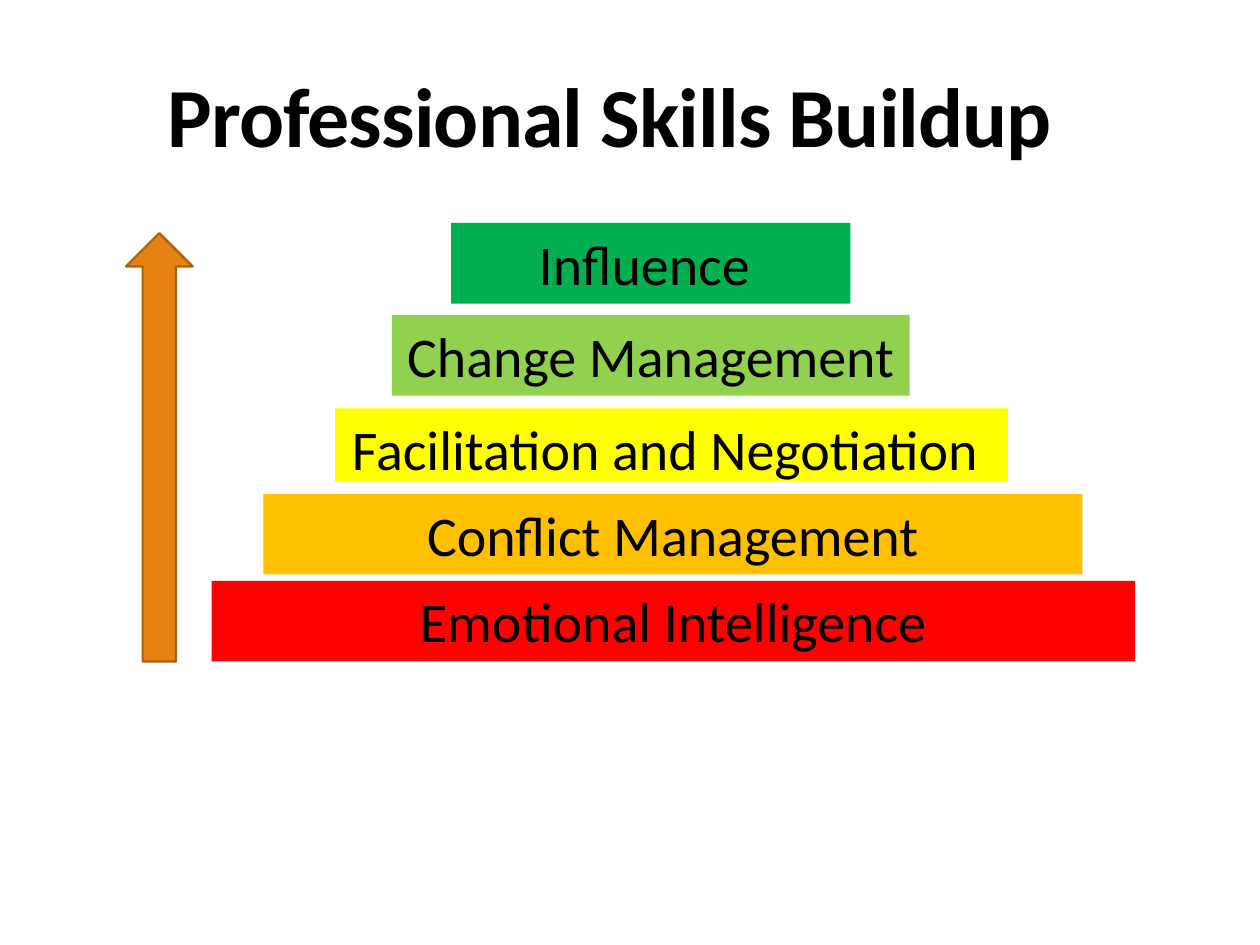
"""Build the Professional Skills Buildup slide: a stepped pyramid beside a rising arrow."""
import pptx
import pptx.dml.color
import pptx.enum.shapes
import pptx.enum.text
import pptx.util

Inches, Pt = pptx.util.Inches, pptx.util.Pt
MSO_SHAPE = pptx.enum.shapes.MSO_SHAPE
PP_ALIGN = pptx.enum.text.PP_ALIGN
MSO_ANCHOR = pptx.enum.text.MSO_ANCHOR


def color(value):
    return pptx.dml.color.RGBColor.from_string(value)


def write(frame, text, align, anchor, formats):
    frame.vertical_anchor = anchor
    paragraph = frame.paragraphs[0]
    paragraph.alignment = align
    run = paragraph.add_run()
    run.text = text
    run.font.color.rgb = color("000000")
    for key, value in formats.items():
        setattr(run.font, key, value)
    return paragraph, run


deck = pptx.Presentation()
deck.slide_width, deck.slide_height = Inches(10), Inches(7.5)
slide = deck.slides.add_slide(deck.slide_layouts[6])

heading = slide.shapes.add_textbox(Inches(1.23), Inches(0.33), Inches(8.25), Inches(1.03))
heading.text_frame.word_wrap = True
heading_line, heading_words = write(
    heading.text_frame, "Professional Skills Buildup", PP_ALIGN.LEFT, MSO_ANCHOR.BOTTOM,
    {"name": "Calibri", "size": Pt(48), "bold": True})
heading_line.line_spacing = 0.85
heading_words.font._element.set("spc", "-50")

skills = [
    ("Emotional Intelligence", "FF0000", 1.68, 4.61, 7.33, 0.64),
    ("Conflict Management", "FFC000", 2.09, 3.92, 6.5, 0.64),
    ("Facilitation and Negotiation ", "FFFF00", 2.66, 3.24, 5.34, 0.58),
    ("Change Management", "92D050", 3.11, 2.5, 4.11, 0.64),
    ("Influence ", "00B050", 3.58, 1.77, 3.17, 0.64),
]
for skill, fill, *bounds in skills:
    step = slide.shapes.add_shape(MSO_SHAPE.RECTANGLE, *map(Inches, bounds))
    step.shadow.inherit = False
    step.fill.solid()
    step.fill.fore_color.rgb = color(fill)
    step.line.fill.background()
    step.text_frame.word_wrap = False
    write(step.text_frame, skill, PP_ALIGN.CENTER, MSO_ANCHOR.TOP,
          {"name": "Calibri", "size": Pt(32)})

growth = slide.shapes.add_shape(
    MSO_SHAPE.UP_ARROW, Inches(1), Inches(1.85), Inches(0.53), Inches(3.4))
growth.shadow.inherit = False
growth.fill.solid()
growth.fill.fore_color.rgb = color("E48312")
growth.line.color.rgb = color("A9610D")
growth.line.width = Pt(1.25)

deck.save("out.pptx")
